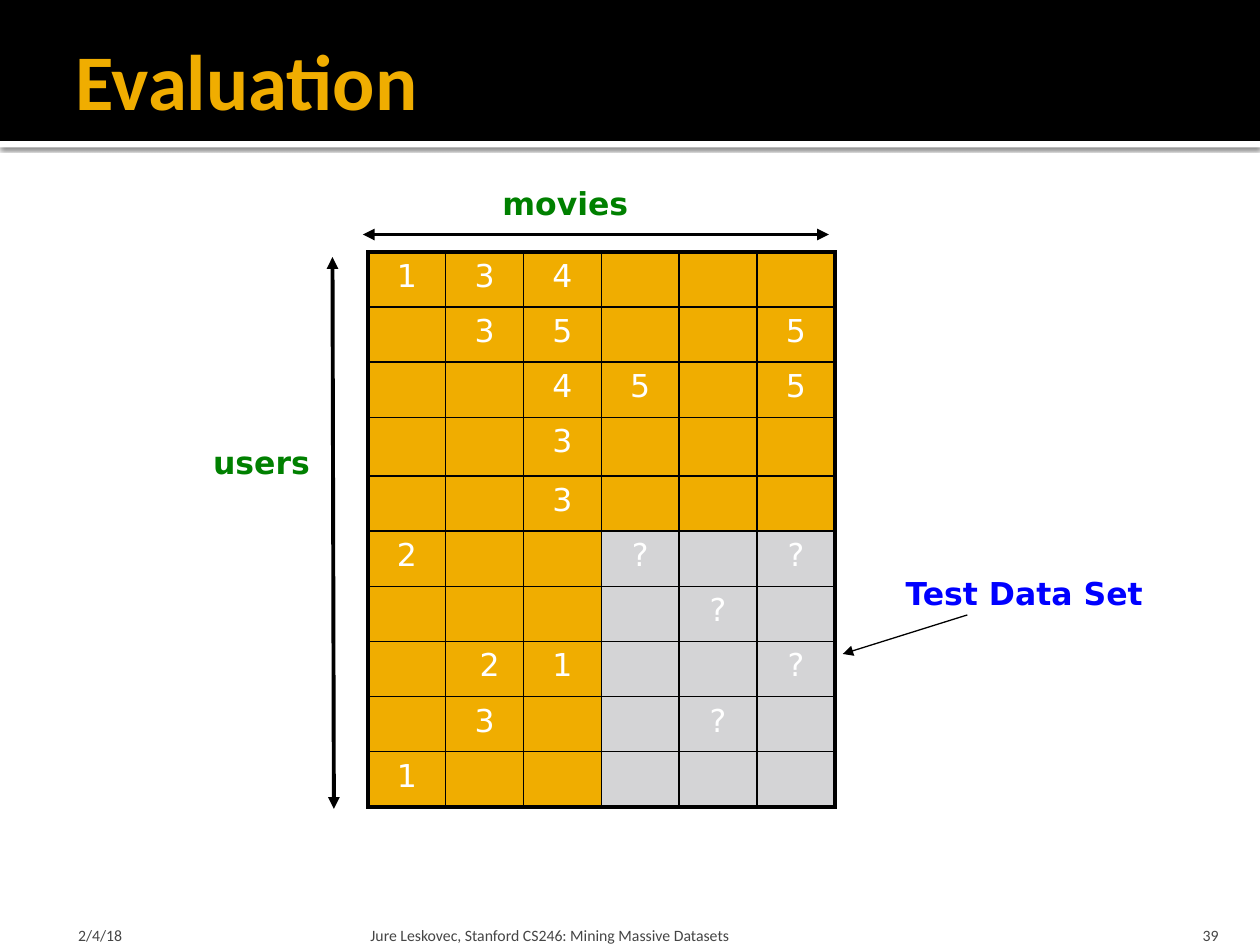
from lxml import etree
from pptx import Presentation
from pptx.dml.color import RGBColor
from pptx.enum import shapes, text
from pptx.oxml import parse_xml
from pptx.oxml.ns import nsdecls, qn
from pptx.util import Pt

GOLD, GREY, BLACK, WHITE = "F0AD00", "D4D4D6", "000000", "FFFFFF"
GREEN, BLUE, FOOTER = "008000", "0000FF", "454545"
HEAVY, THIN = 2.25, 1
RATINGS = [
    ["1", "3", "4", "", "", ""],
    ["", "3", "5", "", "", "5"],
    ["", "", "4", "5", "", "5"],
    ["", "", "3", "", "", ""],
    ["", "", "3", "", "", ""],
    ["2", "", "", "?", "", "?"],
    ["", "", "", "", "?", ""],
    ["", " 2", "1", "", "", "?"],
    ["", "3", "", "", "?", ""],
    ["1", "", "", "", "", ""],
]
TEST_ROW, TEST_COLUMN = 5, 3  # the test set starts here


def color(value):
    return RGBColor.from_string(value)


def add_span(para, words, size, font, shade, bold=False):
    span = para.add_run()
    span.text = words
    span.font.size, span.font.name, span.font.bold = Pt(size), font, bold
    span.font.color.rgb = color(shade)


def set_insets(frame, insets):
    (frame.margin_left, frame.margin_top,
     frame.margin_right, frame.margin_bottom) = map(Pt, insets)


def add_label(page, box, words, shade, size=18, font="DejaVu Sans", bold=True,
              align=text.PP_ALIGN.LEFT, wrap=False):
    label = page.shapes.add_textbox(*map(Pt, box))
    frame = label.text_frame
    frame.word_wrap = wrap
    para = frame.paragraphs[0]
    para.alignment = align
    add_span(para, words, size, font, shade, bold)
    return frame


def add_band(page, box, shade):
    band = page.shapes.add_shape(shapes.MSO_SHAPE.RECTANGLE, *map(Pt, box))
    band.shadow.inherit = False
    band.fill.solid()
    band.fill.fore_color.rgb = color(shade)
    band.line.fill.background()
    return band


def add_header(page, box):
    left, top, width, height = box
    # White strip with a soft shadow, then the black band
    strip = add_band(page, (left, top + height, width, 3.6), WHITE)
    effects = strip._element.spPr.find(qn("a:effectLst"))
    effects.append(parse_xml(
        f'<a:outerShdw {nsdecls("a")} blurRad="{Pt(2.5)}" dist="{Pt(0.8)}" '
        f'dir="5400000" rotWithShape="0"><a:srgbClr val="{BLACK}">'
        '<a:alpha val="60000"/></a:srgbClr></a:outerShdw>'))
    add_band(page, box, BLACK)

    # Title, brought in front of the bands
    title = page.shapes.title
    title._element.getparent().append(title._element)
    title.left, title.top = Pt(left + 36), Pt(top + 12.24)
    title.width, title.height = Pt(width - 72), Pt(66.24)
    frame = title.text_frame
    frame.auto_size = text.MSO_AUTO_SIZE.NONE
    frame.vertical_anchor = text.MSO_ANCHOR.MIDDLE
    set_insets(frame, (7.2, 3.6, 3.6, 3.6))
    frame.paragraphs[0].alignment = text.PP_ALIGN.LEFT
    add_span(frame.paragraphs[0], "Evaluation", 45, "Calibri", GOLD, True)


def set_borders(cell, widths):
    properties = cell._tc.get_or_add_tcPr()
    for place, (side, width) in enumerate(zip("LRTB", widths)):
        properties.insert(place, parse_xml(
            f'<a:ln{side} {nsdecls("a")} w="{Pt(width)}"><a:solidFill>'
            f'<a:srgbClr val="{BLACK}"/></a:solidFill></a:ln{side}>'))


def add_ratings(page, box):
    last_row, last_column = len(RATINGS) - 1, len(RATINGS[0]) - 1
    table = page.shapes.add_table(last_row + 1, last_column + 1, *map(Pt, box)).table
    table.first_row = table.horz_banding = False
    for column in table.columns:
        column.width = Pt(box[2] / (last_column + 1))
    for r, ratings in enumerate(RATINGS):
        table.rows[r].height = Pt(33.6 if r == 3 else 31.5)
        for c, rating in enumerate(ratings):
            cell = table.cell(r, c)
            outer = (c == 0, c == last_column, r == 0, r == last_row)
            set_borders(cell, [HEAVY if edge else THIN for edge in outer])
            in_test = r >= TEST_ROW and c >= TEST_COLUMN
            cell.fill.solid()
            cell.fill.fore_color.rgb = color(GREY if in_test else GOLD)
            if rating:
                para = cell.text_frame.paragraphs[0]
                para.alignment = text.PP_ALIGN.CENTER
                para.space_before = Pt(3.6)
                add_span(para, rating, 18, "DejaVu Sans", WHITE)


def add_arrow(page, start, end, width, both=False):
    arrow = page.shapes.add_connector(
        shapes.MSO_CONNECTOR.STRAIGHT, *map(Pt, start + end))
    arrow.line.color.rgb = color(BLACK)
    arrow.line.width = Pt(width)
    line = arrow.line._get_or_add_ln()
    for name in (["headEnd"] if both else []) + ["tailEnd"]:
        etree.SubElement(line, qn(f"a:{name}"), type="triangle")
    etree.SubElement(arrow._element.spPr, qn("a:effectLst"))


def add_annotations(page, box):
    left, top, width, height = box
    right = left + width
    # Axes of the matrix
    add_label(page, (left + 69.8, top - 42.5, 87, 28.8), "movies", GREEN)
    add_arrow(page, (left - 2.9, top - 10), (right - 3.5, top - 10), HEAVY, True)
    add_label(page, (left - 131, top + 105.8, 140.4, 28.8), "users", GREEN,
              align=text.PP_ALIGN.CENTER, wrap=True)
    add_arrow(page, (left - 20.2, top + 2.9), (left - 19.4, top + 318.2), HEAVY, True)
    # Test set
    add_label(page, (right + 33.2, top + 180.7, 151.2, 28.8), "Test Data Set", BLUE)
    add_arrow(page, (right + 75.6, top + 207.4), (right + 4.4, top + 229.7), 0.75)


def add_footer(page, box):
    left, top, width, height = box
    parts = [
        (0, 167.8, "2/4/18", text.PP_ALIGN.LEFT, (8.64, 3.6, 3.6, 0)),
        (172.1, 433.4, "Jure Leskovec, Stanford CS246: Mining Massive Datasets",
         text.PP_ALIGN.LEFT, (3.6, 3.6, 3.6, 0)),
        (width - 57.6, 57.6, "39", text.PP_ALIGN.RIGHT, (7.2, 3.6, 7.2, 0)),
    ]
    for offset, part_width, words, align, insets in parts:
        frame = add_label(page, (left + offset, top, part_width, height), words,
                          FOOTER, 9, "Calibri", False, align, True)
        frame.vertical_anchor = text.MSO_ANCHOR.BOTTOM
        set_insets(frame, insets)


def main():
    deck = Presentation()
    deck.slide_width, deck.slide_height = Pt(720), Pt(540)
    page = deck.slides.add_slide(deck.slide_layouts[5])
    matrix = (210.2, 144, 267, 317.1)
    add_header(page, (0, 0, 720, 80.6))
    add_ratings(page, matrix)
    add_annotations(page, matrix)
    add_footer(page, (36, 518.4, 667.4, 21.6))
    deck.save("out.pptx")


if __name__ == "__main__":
    main()
